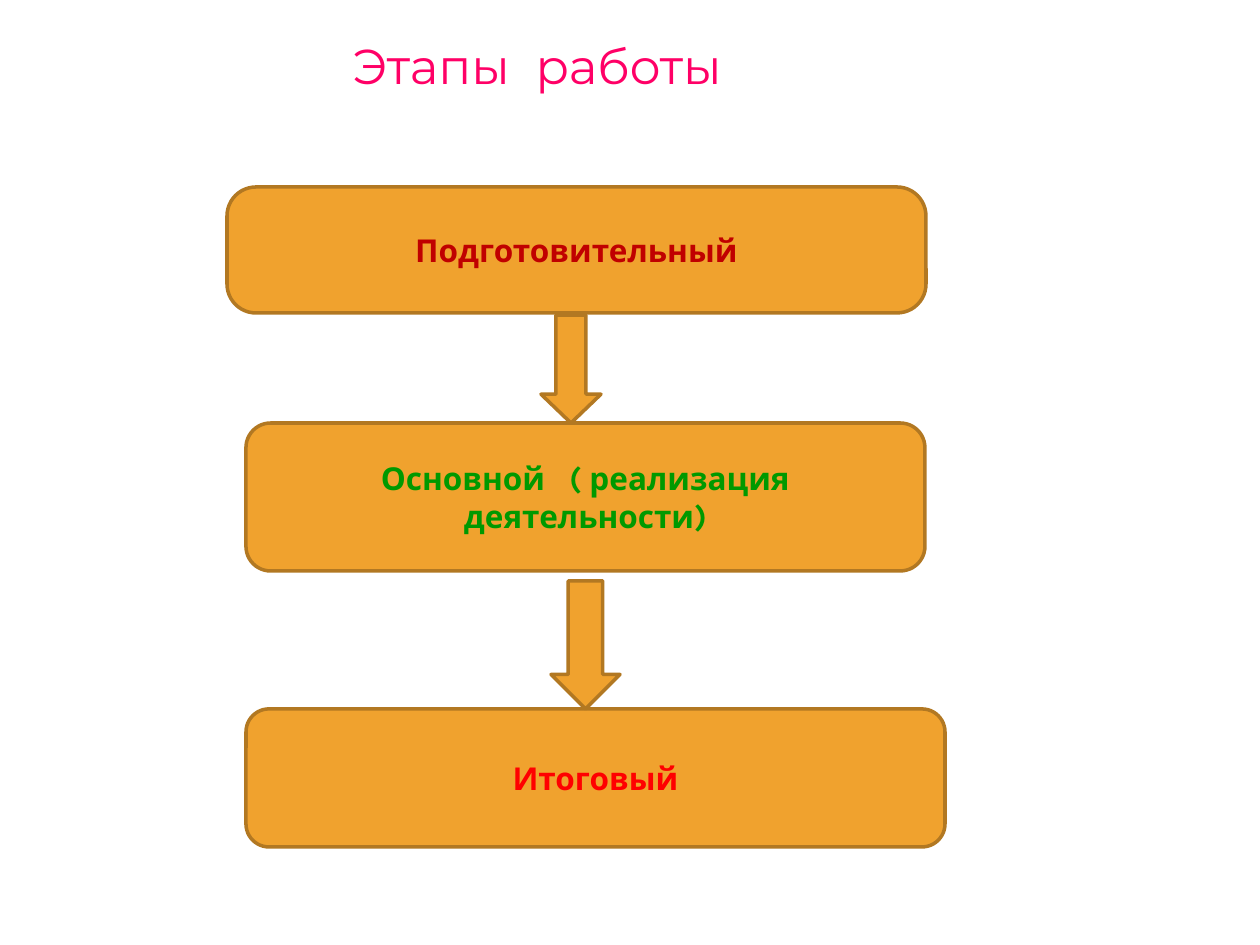
from pptx import Presentation
from pptx.dml.color import RGBColor
from pptx.enum.shapes import MSO_SHAPE as Shape
from pptx.enum.text import MSO_ANCHOR as Anchor, MSO_AUTO_SIZE as AutoSize, PP_ALIGN as Align
from pptx.util import Emu, Pt

PX = 914400 // 126
TITLE_ONLY = 5
COLOURS = {
    "fill": "F0A22E",
    "border": "B27822",
    "title": "FF0066",
    "preparation": "C00000",
    "main": "009900",
    "final": "FF0000",
}


def px(*lengths):
    return [Emu(length * PX) for length in lengths]


class StageSlide:
    """Holds the style and the current slide."""

    heading_font, label_font = "Montserrat", "Karla"

    def __init__(self, deck):
        self.page = deck.slides.add_slide(deck.slide_layouts[TITLE_ONLY])

    def colour(self, name):
        return RGBColor.from_string(COLOURS[name])

    def set_text(self, frame, text, font, size, colour, align, bold=False):
        frame.word_wrap = True
        para = frame.paragraphs[0]
        para.text = text
        para.alignment = align
        para.font.name = font
        para.font.size = Pt(size)
        para.font.bold = bold
        para.font.color.rgb = self.colour(colour)

    def title(self, text, area, indent):
        box = self.page.shapes.title
        box.left, box.top, box.width, box.height = px(*area)
        frame = box.text_frame
        frame.auto_size = AutoSize.SHAPE_TO_FIT_TEXT
        frame.vertical_anchor = Anchor.TOP
        frame.margin_left = px(indent)[0]
        self.set_text(frame, text, self.heading_font, 28, "title", Align.LEFT)

    def shape(self, kind, area, adjustments=()):
        shape = self.page.shapes.add_shape(kind, *px(*area))
        shape.shadow.inherit = False
        shape.fill.solid()
        shape.fill.fore_color.rgb = self.colour("fill")
        shape.line.color.rgb = self.colour("border")
        shape.line.width = Pt(2)
        for index, value in enumerate(adjustments):
            shape.adjustments[index] = value
        return shape

    def stage(self, text, colour, area, adjustments=()):
        frame = self.shape(Shape.ROUNDED_RECTANGLE, area, adjustments).text_frame
        frame.vertical_anchor = Anchor.MIDDLE
        self.set_text(frame, text, self.label_font, 18, colour, Align.CENTER, bold=True)

    def arrow(self, area, adjustments=()):
        self.shape(Shape.DOWN_ARROW, area, adjustments)


def main():
    deck = Presentation()
    deck.slide_width, deck.slide_height = px(1260, 945)
    slide = StageSlide(deck)

    # Heading
    slide.title("Этапы  работы", (227, 29, 758, 72), indent=126)

    # Stages of work
    slide.stage("Подготовительный", "preparation", (227, 187, 699, 126), [0.23])
    slide.stage("Основной   ( реализация деятельности)", "main", (246, 423, 679, 148))
    slide.stage("Итоговый", "final", (246, 709, 699, 138))

    # Arrows between the stages
    slide.arrow((541, 315, 60, 108), [0.5, 0.48])
    slide.arrow((551, 581, 69, 128))

    deck.save("out.pptx")


if __name__ == "__main__":
    main()
